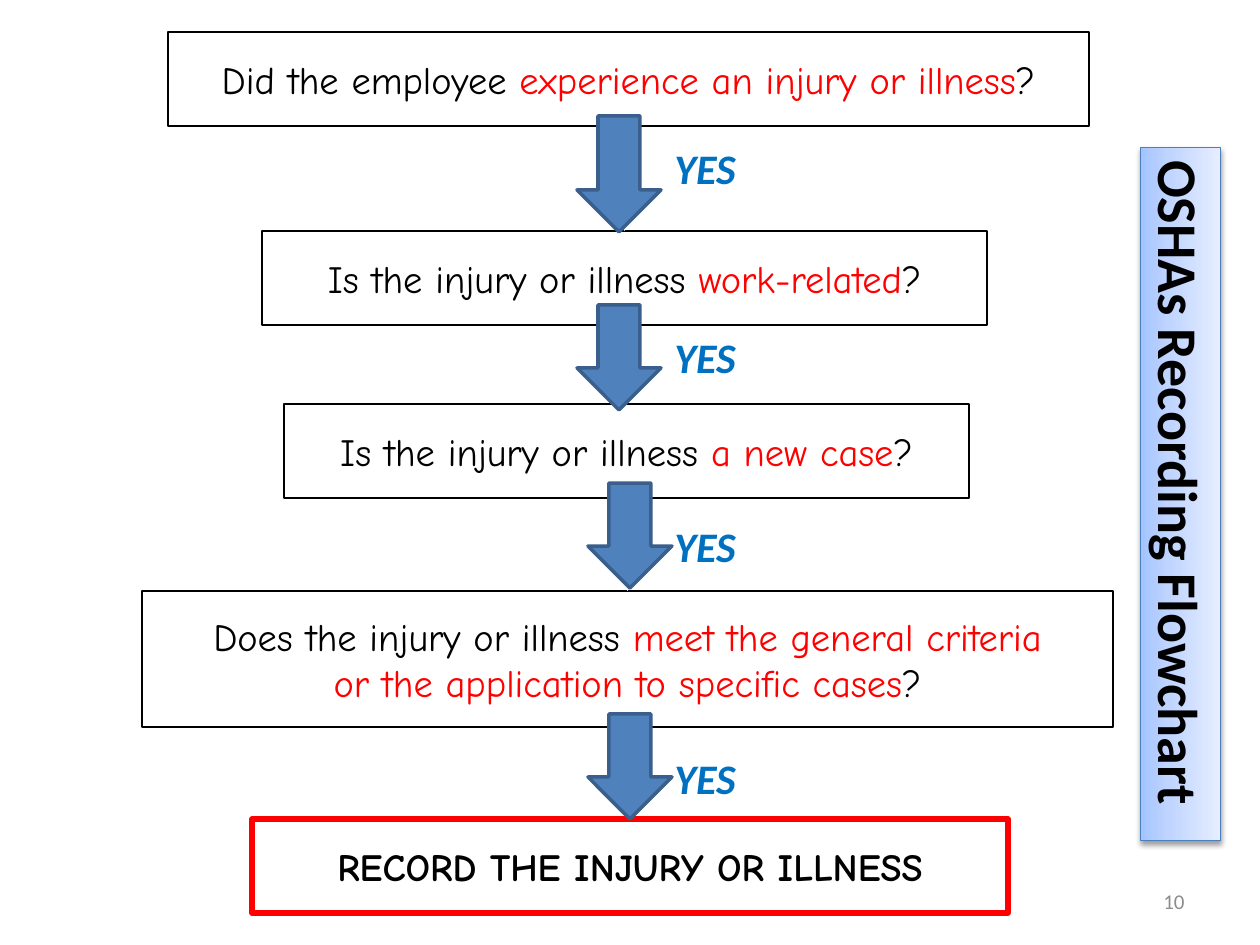
from dataclasses import dataclass
from itertools import pairwise

from lxml import etree
from pptx import Presentation
from pptx.dml.color import RGBColor
from pptx.enum import shapes, text
from pptx.oxml import parse_xml
from pptx.oxml.ns import nsdecls, qn
from pptx.util import Emu, Pt

PX = 914400 / 126
BLACK = RGBColor(0x00, 0x00, 0x00)
WHITE = RGBColor(0xFF, 0xFF, 0xFF)
RED = RGBColor(0xFF, 0x00, 0x00)
GRAY = RGBColor(0x8C, 0x8C, 0x8C)
YES = RGBColor(0x00, 0x70, 0xC0)
BLUE = RGBColor(0x4F, 0x81, 0xBD)
NAVY = RGBColor(0x3A, 0x5F, 0x8C)
EDGE = RGBColor(0x4B, 0x7E, 0xBC)
STOPS = (
    (0, RGBColor(0xA4, 0xC4, 0xFF)),
    (35, RGBColor(0xBF, 0xD4, 0xFF)),
    (100, RGBColor(0xE6, 0xEE, 0xFF)),
)
HAND = "Comic Neue"
SANS = "Calibri"


@dataclass
class Box:
    left: int
    top: int
    width: int
    height: int
    lines: list
    edge: RGBColor = BLACK
    weight: int = 1
    bold: bool = False


@dataclass
class Step:
    left: int
    top: int
    height: int
    label: int


ASK = "Is the injury or illness "
BOXES = [
    Box(168, 32, 921, 94, [[("Did the employee ", BLACK),
        ("experience an injury or illness", RED), ("?", BLACK)]]),
    Box(262, 231, 725, 94, [[(ASK, BLACK), ("work-related", RED), ("?", BLACK)]]),
    Box(284, 404, 685, 94, [[(ASK, BLACK), ("a new case", RED), ("?", BLACK)]]),
    Box(142, 591, 971, 136, [
        [("Does the injury or illness ", BLACK), ("meet the general criteria", RED)],
        [("or the application to specific cases", RED), ("?", BLACK)]]),
    Box(252, 819, 756, 94, [[("RECORD THE INJURY OR ILLNESS", BLACK)]], RED, 3, True),
]
STEPS = [
    Step(577, 116, 116, 136),
    Step(577, 305, 105, 325),
    Step(588, 483, 105, 514),
    Step(588, 714, 105, 746),
]


def px(*nums: int) -> list[Emu]:
    return [Emu(round(n * PX)) for n in nums]


def style(run, face: str, size: int, color: RGBColor, bold=False, slant=False) -> None:
    font = run.font
    font.name, font.size, font.bold, font.italic = face, Pt(size), bold, slant
    font.color.rgb = color


def paint(shape, fill: RGBColor, edge: RGBColor, weight: float) -> None:
    shape.shadow.inherit = False
    shape.fill.solid()
    shape.fill.fore_color.rgb = fill
    shape.line.color.rgb = edge
    shape.line.width = Pt(weight)


def draw_box(slide, box: Box):
    shape = slide.shapes.add_shape(
        shapes.MSO_SHAPE.RECTANGLE, *px(box.left, box.top, box.width, box.height))
    paint(shape, WHITE, box.edge, box.weight)
    frame = shape.text_frame
    frame.word_wrap = False
    frame.vertical_anchor = text.MSO_ANCHOR.MIDDLE
    frame.text = "\n".join("".join(part for part, _ in line) for line in box.lines)
    for para, line in zip(frame.paragraphs, box.lines):
        para.alignment = text.PP_ALIGN.CENTER
        para.clear()
        for part, color in line:
            run = para.add_run()
            run.text = part
            style(run, HAND, 22, color, box.bold)
    return shape


def draw_text(slide, words: str, area: tuple):
    frame = slide.shapes.add_textbox(*px(*area)).text_frame
    frame.text = words
    return frame


def draw_link(slide, start, end) -> None:
    link = slide.shapes.add_connector(shapes.MSO_CONNECTOR.STRAIGHT, 0, 0, 0, 0)
    link.begin_connect(start, 2)
    link.end_connect(end, 0)
    link.line.color.rgb = WHITE
    link.line.width = Pt(3)
    tail = etree.SubElement(link.line._get_or_add_ln(), qn("a:tailEnd"))
    tail.set("type", "triangle")
    etree.SubElement(link._element.spPr, qn("a:effectLst"))


def draw_step(slide, step: Step) -> None:
    arrow = slide.shapes.add_shape(
        shapes.MSO_SHAPE.DOWN_ARROW, *px(step.left, step.top, 84, step.height))
    paint(arrow, BLUE, NAVY, 2)


def draw_label(slide, step: Step) -> None:
    frame = draw_text(slide, "YES", (662, step.label, 87, 63))
    frame.word_wrap = False
    style(frame.paragraphs[0].runs[0], SANS, 24, YES, True, True)


def draw_title(slide) -> None:
    title = slide.shapes.title
    title.left, title.top, title.width, title.height = px(834, 454, 693, 80)
    title.rotation = 90
    title.line.color.rgb = EDGE
    title.line.width = Pt(0.75)
    stops = "".join(
        f'<a:gs pos="{at * 1000}"><a:srgbClr val="{color}"/></a:gs>' for at, color in STOPS)
    grad = parse_xml(
        f'<a:gradFill {nsdecls("a")} rotWithShape="1"><a:gsLst>{stops}</a:gsLst>'
        '<a:lin ang="16200000" scaled="0"/></a:gradFill>')
    title.line._get_or_add_ln().addprevious(grad)
    title._element.spPr.append(parse_xml(
        f'<a:effectLst {nsdecls("a")}><a:outerShdw blurRad="39370" dist="20320" '
        'dir="5400000" rotWithShape="0"><a:srgbClr val="000000"><a:alpha val="38000"/>'
        '</a:srgbClr></a:outerShdw></a:effectLst>'))
    frame = title.text_frame
    frame.text = "OSHAs Recording Flowchart"
    frame.auto_size = text.MSO_AUTO_SIZE.NONE
    frame.vertical_anchor = text.MSO_ANCHOR.TOP
    para = frame.paragraphs[0]
    para.alignment = text.PP_ALIGN.LEFT
    style(para.runs[0], SANS, 32, BLACK, True)


def main() -> None:
    deck = Presentation()
    deck.slide_width, deck.slide_height = px(1260, 945)
    slide = deck.slides.add_slide(deck.slide_layouts[5])
    draw_title(slide)

    frame = draw_text(slide, "10", (903, 876, 294, 50))
    frame.word_wrap = True
    frame.vertical_anchor = text.MSO_ANCHOR.MIDDLE
    para = frame.paragraphs[0]
    para.alignment = text.PP_ALIGN.RIGHT
    style(para.runs[0], SANS, 12, GRAY)

    boxes = [draw_box(slide, box) for box in BOXES]
    for step in STEPS:
        draw_label(slide, step)
    for start, end in pairwise(boxes):
        draw_link(slide, start, end)
    for step in STEPS:
        draw_step(slide, step)
    deck.save("out.pptx")


if __name__ == "__main__":
    main()
